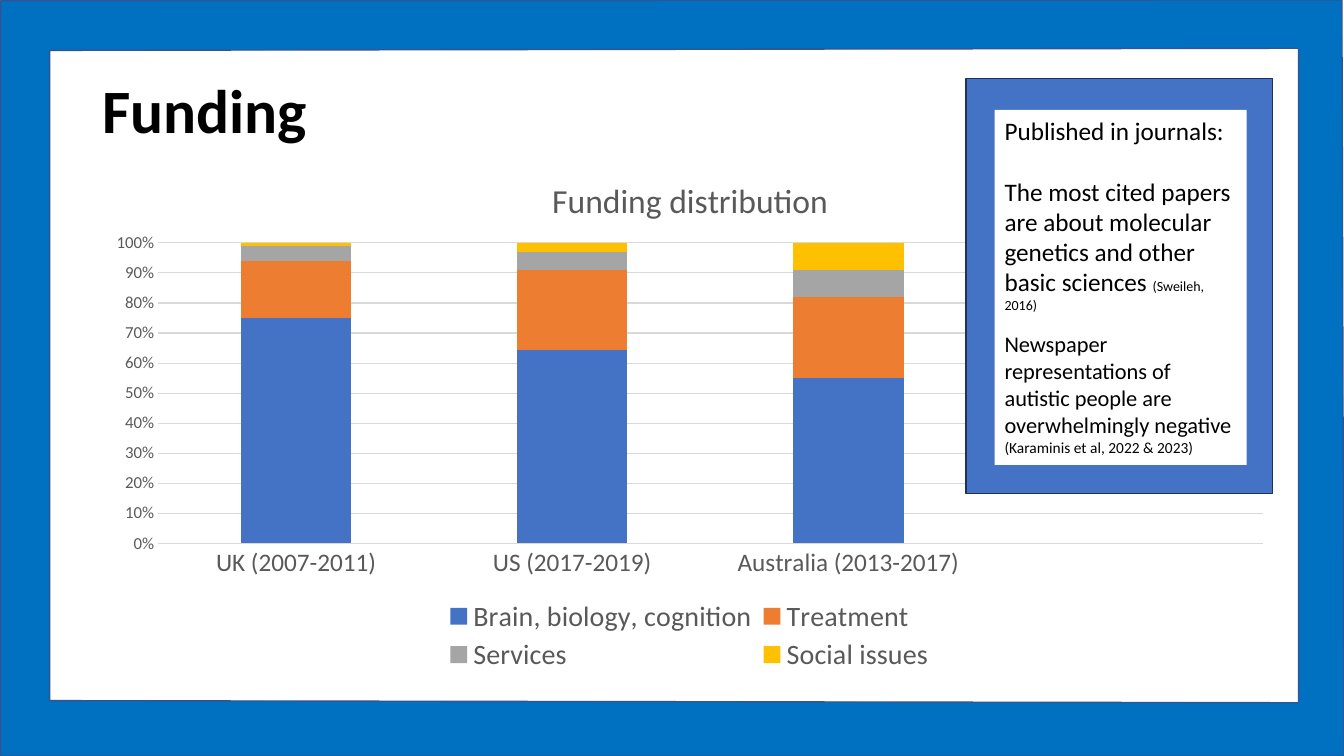
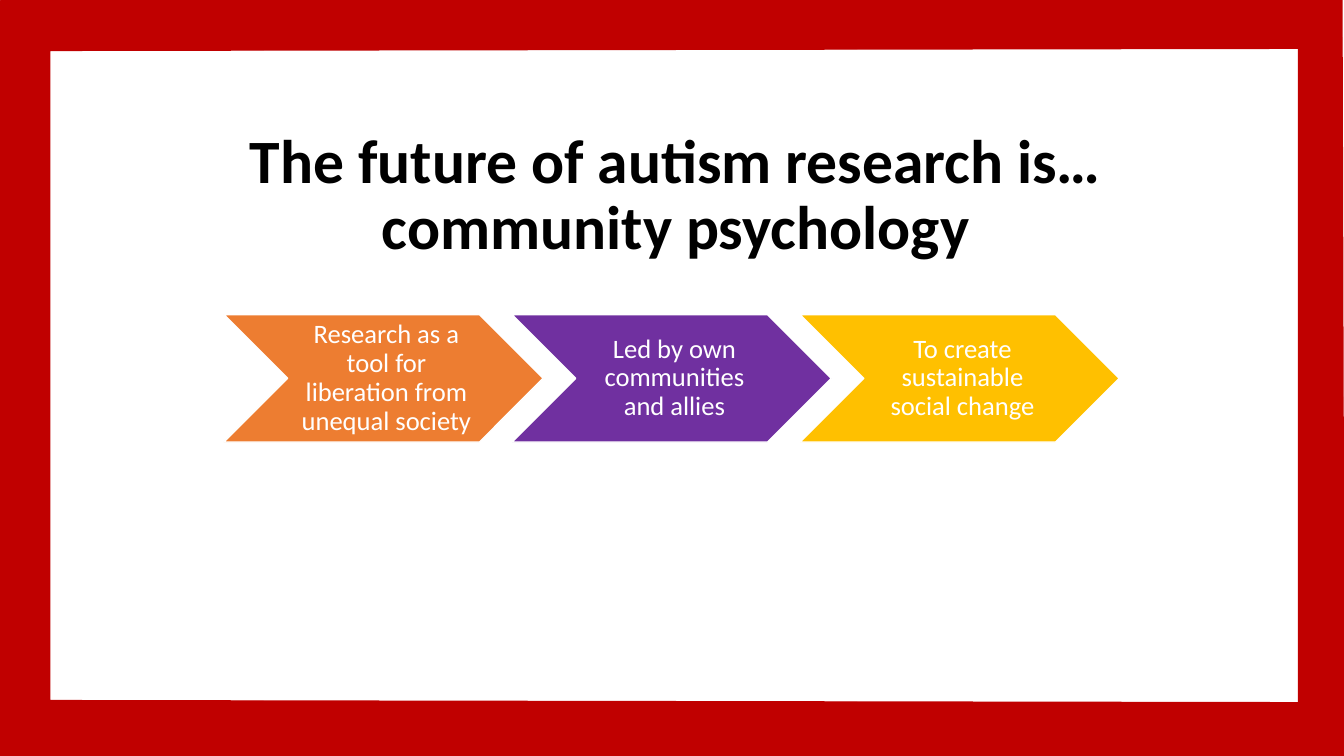
from dataclasses import dataclass

import pptx
import pptx.chart.data
import pptx.dml.color
import pptx.enum.chart
import pptx.enum.shapes
import pptx.enum.text
import pptx.oxml
import pptx.oxml.ns
import pptx.util
from pptx.dml.color import RGBColor
from pptx.util import Pt

FONT = "Calibri"
BLACK = RGBColor(0x00, 0x00, 0x00)
WHITE = RGBColor(0xFF, 0xFF, 0xFF)
FRAME_BLUE = RGBColor(0x00, 0x70, 0xC0)
FRAME_BLUE_EDGE = RGBColor(0x32, 0x54, 0x91)
FRAME_RED = RGBColor(0xC0, 0x00, 0x00)
BLUE = RGBColor(0x44, 0x72, 0xC4)
NAVY = RGBColor(0x1E, 0x32, 0x56)
ORANGE = RGBColor(0xED, 0x7D, 0x31)
GREY = RGBColor(0xA5, 0xA5, 0xA5)
YELLOW = RGBColor(0xFF, 0xC0, 0x00)
PURPLE = RGBColor(0x70, 0x30, 0xA0)
CHART_TEXT = RGBColor(0x59, 0x59, 0x59)
CHART_LINE = RGBColor(0xD9, 0xD9, 0xD9)

ALIGN = pptx.enum.text.PP_ALIGN
ANCHOR = pptx.enum.text.MSO_ANCHOR
SHAPE = pptx.enum.shapes.MSO_SHAPE

FRAME_OUTER = [(0.5, 0.5), (958.5, 0), (960, 540), (0.5, 540)]
FRAME_INNER = [(35.5, 36), (35.5, 500.5), (927.5, 502), (927.5, 34.5)]


@dataclass(frozen=True)
class Area:
    """A rectangle in points."""
    left: float
    top: float
    width: float
    height: float

    def lengths(self) -> list:
        return [Pt(value) for value in (self.left, self.top, self.width, self.height)]


@dataclass(frozen=True)
class FundingSeries:
    name: str
    values: tuple
    color: RGBColor


@dataclass(frozen=True)
class PanelNote:
    text: str
    size: float
    citation: str = ""
    citation_size: float = 0
    space_before: float = 0


@dataclass(frozen=True)
class Step:
    text: str
    color: RGBColor


COUNTRIES = ["UK (2007-2011)", "US (2017-2019)", "Australia (2013-2017)", ""]
FUNDING = [
    FundingSeries("Brain, biology, cognition", (75, 65, 55, None), BLUE),
    FundingSeries("Treatment", (19, 27, 27, None), ORANGE),
    FundingSeries("Services", (5, 6, 9, None), GREY),
    FundingSeries("Social issues", (1, 3, 9, None), YELLOW),
]
NOTES = [
    PanelNote("Published in journals:", 18),
    PanelNote("The most cited papers are about molecular genetics and other basic sciences ",
              18, "(Sweileh, 2016)", 10, 22),
    PanelNote("Newspaper representations of autistic people are overwhelmingly negative ",
              16, "(Karaminis et al, 2022 & 2023)", 11, 12),
]
STEPS = [
    Step("Research as a tool for liberation from unequal society", ORANGE),
    Step("Led by own communities and allies", PURPLE),
    Step("To create sustainable social change", YELLOW),
]
STEP_AREA = Area(160, 224.75, 228, 91)
STEP_PITCH = 205.75


def style_font(font, size: float, color: RGBColor, bold: bool = False) -> None:
    font.name = FONT
    font.size = Pt(size)
    font.bold = bold
    font.color.rgb = color


def style_shape(shape, fill: RGBColor, line: RGBColor) -> None:
    shape.shadow.inherit = False
    shape.fill.solid()
    shape.fill.fore_color.rgb = fill
    shape.line.color.rgb = line
    shape.line.width = Pt(1)


def add_frame(slide, fill: RGBColor, line: RGBColor) -> None:
    """Draw the border as one outline with a hole wound the other way."""
    outer, inner = ([(Pt(x), Pt(y)) for x, y in ring] for ring in (FRAME_OUTER, FRAME_INNER))
    builder = slide.shapes.build_freeform(*outer[0])
    builder.add_line_segments(outer[1:], close=True)
    builder.move_to(*inner[0])
    builder.add_line_segments(inner[1:], close=True)
    style_shape(builder.convert_to_shape(), fill, line)


def add_framed_slide(deck, title: str, area: Area, align, fill: RGBColor, line: RGBColor):
    slide = deck.slides.add_slide(deck.slide_layouts[5])
    box = slide.shapes.title
    box.left, box.top, box.width, box.height = area.lengths()
    frame = box.text_frame
    frame.text = title
    frame.vertical_anchor = ANCHOR.MIDDLE
    para = frame.paragraphs[0]
    para.alignment = align
    para.line_spacing = 0.9
    style_font(para.runs[0].font, 44, BLACK, bold=True)
    add_frame(slide, fill, line)
    return slide


def set_layout(chart, tag: str, index: int, inner: bool = False, **fractions: float) -> None:
    """Place a chart part by fractions of the chart, as its child number index."""
    qn = pptx.oxml.ns.qn
    parent = chart.element.find(f".//{qn('c:chart')}/{qn(tag)}")
    for old in parent.findall(qn("c:layout")):
        parent.remove(old)
    target = '<c:layoutTarget val="inner"/>' if inner else ""
    modes = "".join(f'<c:{key}Mode val="edge"/>' for key in fractions if key in "xy")
    values = "".join(f'<c:{key} val="{value}"/>' for key, value in fractions.items())
    parent.insert(index, pptx.oxml.parse_xml(
        f"<c:layout {pptx.oxml.ns.nsdecls('c')}><c:manualLayout>"
        f"{target}{modes}{values}</c:manualLayout></c:layout>"))


def style_axes(chart) -> None:
    for axis, size in ((chart.category_axis, 18), (chart.value_axis, 12)):
        axis.major_tick_mark = axis.minor_tick_mark = pptx.enum.chart.XL_TICK_MARK.NONE
        style_font(axis.tick_labels.font, size, CHART_TEXT)
    value_axis = chart.value_axis
    value_axis.tick_labels.number_format = "0%"
    value_axis.tick_labels.number_format_is_linked = False
    value_axis.format.line.fill.background()
    value_axis.has_major_gridlines = True
    for line in (chart.category_axis.format.line, value_axis.major_gridlines.format.line):
        line.color.rgb = CHART_LINE
        line.width = Pt(0.75)


def add_funding_chart(slide, area: Area) -> None:
    data = pptx.chart.data.CategoryChartData()
    data.categories = COUNTRIES
    for entry in FUNDING:
        data.add_series(entry.name, entry.values)
    chart = slide.shapes.add_chart(
        pptx.enum.chart.XL_CHART_TYPE.COLUMN_STACKED_100, *area.lengths(), data).chart
    style_font(chart.font, 10, BLACK)
    style_axes(chart)

    plot = chart.plots[0]
    plot.gap_width = 150
    plot.overlap = 100
    plot.vary_by_categories = False
    for series, entry in zip(plot.series, FUNDING):
        series.format.fill.solid()
        series.format.fill.fore_color.rgb = entry.color

    chart.has_title = True
    title = chart.chart_title.text_frame
    title.text = "Funding distribution"
    style_font(title.paragraphs[0].runs[0].font, 24, CHART_TEXT)
    chart.has_legend = True
    chart.legend.position = pptx.enum.chart.XL_LEGEND_POSITION.BOTTOM
    chart.legend.include_in_layout = False
    style_font(chart.legend.font, 20, CHART_TEXT)

    set_layout(chart, "c:title", 1, x=0.38, y=0.05)
    set_layout(chart, "c:plotArea", 0, inner=True, x=0.055, y=0.183, w=0.925, h=0.56)
    set_layout(chart, "c:legend", 1, x=0.29, y=0.84, w=0.42, h=0.15)


def add_notes_panel(slide) -> None:
    panel = slide.shapes.add_shape(SHAPE.RECTANGLE, *Area(690, 56, 219, 296.5).lengths())
    style_shape(panel, BLUE, NAVY)
    box = slide.shapes.add_textbox(*Area(710.5, 78.5, 180, 253.5).lengths())
    box.fill.solid()
    box.fill.fore_color.rgb = WHITE
    frame = box.text_frame
    frame.word_wrap = True
    for index, note in enumerate(NOTES):
        para = frame.add_paragraph() if index else frame.paragraphs[0]
        para.text = note.text
        style_font(para.runs[0].font, note.size, BLACK)
        if note.space_before:
            para.space_before = Pt(note.space_before)
        if note.citation:
            span = para.add_run()
            span.text = note.citation
            style_font(span.font, note.citation_size, BLACK)


def add_steps(slide) -> None:
    for index, step in enumerate(STEPS):
        chevron = slide.shapes.add_shape(SHAPE.CHEVRON, *STEP_AREA.lengths())
        chevron.left = Pt(STEP_AREA.left + index * STEP_PITCH)
        style_shape(chevron, step.color, WHITE)
        frame = chevron.text_frame
        frame.word_wrap = True
        frame.vertical_anchor = ANCHOR.MIDDLE
        frame.margin_left = Pt(6)
        frame.margin_top = frame.margin_right = frame.margin_bottom = Pt(2)
        frame.text = step.text
        para = frame.paragraphs[0]
        para.alignment = ALIGN.CENTER
        para.line_spacing = 0.9
        style_font(para.runs[0].font, 19, WHITE)


def main() -> None:
    deck = pptx.Presentation()
    deck.slide_width, deck.slide_height = Pt(960), Pt(540)

    funding = add_framed_slide(deck, "Funding", Area(66, 29, 828, 104), ALIGN.LEFT,
                               FRAME_BLUE, FRAME_BLUE_EDGE)
    add_funding_chart(funding, Area(66, 103.5, 853, 383))
    add_notes_panel(funding)

    future = add_framed_slide(
        deck, "The future of autism research is… community psychology",
        Area(69, 71, 828, 139), ALIGN.CENTER, FRAME_RED, FRAME_RED)
    add_steps(future)
    deck.save("out.pptx")


if __name__ == "__main__":
    main()
